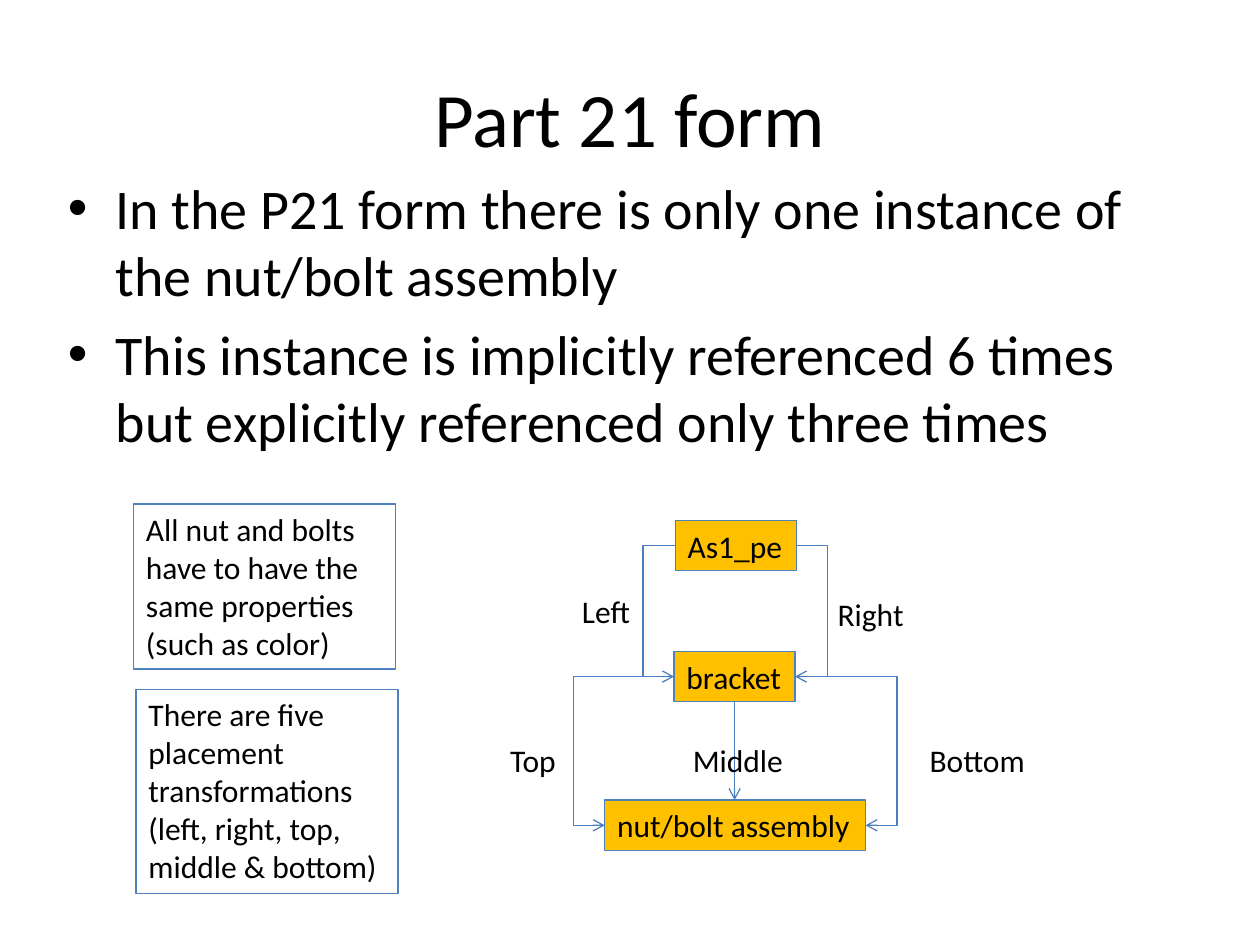
from dataclasses import dataclass

from lxml import etree
from pptx import Presentation
from pptx.dml.color import RGBColor
from pptx.enum.shapes import MSO_CONNECTOR, MSO_SHAPE
from pptx.enum.text import MSO_ANCHOR, MSO_AUTO_SIZE, PP_ALIGN
from pptx.oxml.ns import qn
from pptx.util import Inches, Pt

ELBOW, STRAIGHT = MSO_CONNECTOR.ELBOW, MSO_CONNECTOR.STRAIGHT
RECTANGLE = MSO_SHAPE.RECTANGLE
LEFT, CENTER = PP_ALIGN.LEFT, PP_ALIGN.CENTER
TOP, MIDDLE = MSO_ANCHOR.TOP, MSO_ANCHOR.MIDDLE
FIT_SHAPE, FIT_NONE = MSO_AUTO_SIZE.SHAPE_TO_FIT_TEXT, MSO_AUTO_SIZE.NONE

BLACK = RGBColor(0x00, 0x00, 0x00)
AMBER = RGBColor(0xFF, 0xC0, 0x00)
OUTLINE_BLUE = RGBColor(0x4F, 0x81, 0xBD)
ARROW_BLUE = RGBColor(0x4B, 0x7E, 0xBC)

COLUMNS, ROWS = 100, 75
CELL = Inches(10) // COLUMNS
LINE_WIDTH = Pt(0.75)
BOX_HEIGHT = 4
INDENT = Inches(0.38)
ELBOW_REACH = 2.5


@dataclass(frozen=True)
class Area:
    """A place on the grid, in columns and rows."""
    column: float
    row: float
    width: float
    height: float = BOX_HEIGHT

    @property
    def right(self) -> float:
        return self.column + self.width

    @property
    def center(self) -> float:
        return self.column + self.width / 2

    @property
    def middle(self) -> float:
        return self.row + self.height / 2

    def lengths(self) -> list[int]:
        return [cells(n) for n in (self.column, self.row, self.width, self.height)]


@dataclass(frozen=True)
class TextItem:
    text: str
    area: Area


TITLE = TextItem("Part 21 form", Area(5, 3, 90, 12.5))
BULLETS = (
    "In the P21 form there is only one instance of the nut/bolt assembly",
    "This instance is implicitly referenced 6 times but explicitly referenced only three times",
)
BULLET_AREA = Area(4.4, 13.3, 90, 26.7)

ROOT = TextItem("As1_pe", Area(53.6, 41.3, 9.6))
BRACKET = TextItem("bracket", Area(53.5, 51.7, 9.6))
ASSEMBLY = TextItem("nut/bolt assembly", Area(48, 63.5, 20.7))

LABELS = (
    TextItem("Left", Area(45.2, 46.5, 5.9)),
    TextItem("Right", Area(65.5, 46.7, 7.3)),
    TextItem("Top", Area(39.5, 58.3, 5.7)),
    TextItem("Bottom", Area(72.8, 58.3, 9.7)),
    TextItem("Middle", Area(54, 58.3, 9.3)),
)
NOTES = (
    TextItem("All nut and bolts have to have the same properties (such as color)",
             Area(10.6, 40, 20.8, 13.1)),
    TextItem("There are five placement transformations (left, right, top, middle & bottom)",
             Area(10.8, 54.7, 20.8, 16.2)),
)


def cells(count: float) -> int:
    return round(count * CELL)


def apply_format(target, values: dict) -> None:
    for name, value in values.items():
        setattr(target, name, value)


def write(shape, texts, size: int, wrap=True, align=LEFT, anchor=TOP, fit=FIT_NONE) -> list:
    """Fill a shape with one paragraph per text and return the paragraphs."""
    frame = shape.text_frame
    apply_format(frame, {"word_wrap": wrap, "vertical_anchor": anchor, "auto_size": fit})
    frame.text = "\n".join(texts)
    for para in frame.paragraphs:
        para.alignment = align
        apply_format(para.font, {"name": "Calibri", "size": Pt(size)})
        para.font.color.rgb = BLACK
    return list(frame.paragraphs)


def add_text(page, item: TextItem, size: int, **layout) -> None:
    write(page.shapes.add_textbox(*item.area.lengths()), [item.text], size, **layout)


def add_bullets(page) -> None:
    box = page.shapes.add_textbox(*BULLET_AREA.lengths())
    for para in write(box, BULLETS, 32):
        para.space_before = Pt(6.4)
        settings = para._p.get_or_add_pPr()
        settings.set("marL", str(INDENT))
        settings.set("indent", str(-INDENT))
        etree.SubElement(settings, qn("a:buFont")).set("typeface", "Arial")
        etree.SubElement(settings, qn("a:buChar")).set("char", "•")


def add_box(page, item: TextItem, fill: RGBColor | None = None, wrap: bool = False) -> None:
    box = page.shapes.add_shape(RECTANGLE, *item.area.lengths())
    box.shadow.inherit = False
    if fill is None:
        box.fill.background()
    else:
        box.fill.solid()
        box.fill.fore_color.rgb = fill
    box.line.color.rgb = OUTLINE_BLUE
    box.line.width = LINE_WIDTH
    write(box, [item.text], 18, wrap=wrap, fit=FIT_SHAPE)


def add_arrow(page, start, end, bend: float | None = None) -> None:
    """Draw an arrow; bend is the column of an elbow's upright part."""
    kind = STRAIGHT if bend is None else ELBOW
    arrow = page.shapes.add_connector(kind, *map(cells, (*start, *end)))
    arrow.line.color.rgb = ARROW_BLUE
    arrow.line.width = LINE_WIDTH
    properties = arrow._element.spPr
    etree.SubElement(properties.find(qn("a:ln")), qn("a:tailEnd")).set("type", "arrow")
    etree.SubElement(properties, qn("a:effectLst"))
    if bend is not None:
        share = (bend - start[0]) / (end[0] - start[0])
        guides = properties.find(qn("a:prstGeom")).get_or_add_avLst()
        guide = etree.SubElement(guides, qn("a:gd"))
        guide.set("name", "adj1")
        guide.set("fmla", f"val {round(share * 100000)}")


def add_side_arrows(page, upper: Area, lower: Area) -> None:
    """Join both sides of two boxes by elbows that pass outside the wider one."""
    left = min(upper.column, lower.column) - ELBOW_REACH
    right = max(upper.right, lower.right) + ELBOW_REACH
    add_arrow(page, (upper.column, upper.middle), (lower.column, lower.middle), left)
    add_arrow(page, (upper.right, upper.middle), (lower.right, lower.middle), right)


def main() -> None:
    deck = Presentation()
    deck.slide_width, deck.slide_height = COLUMNS * CELL, ROWS * CELL
    page = deck.slides.add_slide(deck.slide_layouts[6])

    add_text(page, TITLE, 44, align=CENTER, anchor=MIDDLE)
    add_bullets(page)
    for item in (ROOT, BRACKET, ASSEMBLY):
        add_box(page, item, AMBER)
    add_side_arrows(page, ROOT.area, BRACKET.area)
    add_side_arrows(page, BRACKET.area, ASSEMBLY.area)
    stem = BRACKET.area.center
    add_arrow(page, (stem, BRACKET.area.row + BOX_HEIGHT), (stem, ASSEMBLY.area.row))
    for label in LABELS:
        add_text(page, label, 18, wrap=False, fit=FIT_SHAPE)
    for note in NOTES:
        add_box(page, note, wrap=True)

    deck.save("out.pptx")


if __name__ == "__main__":
    main()
